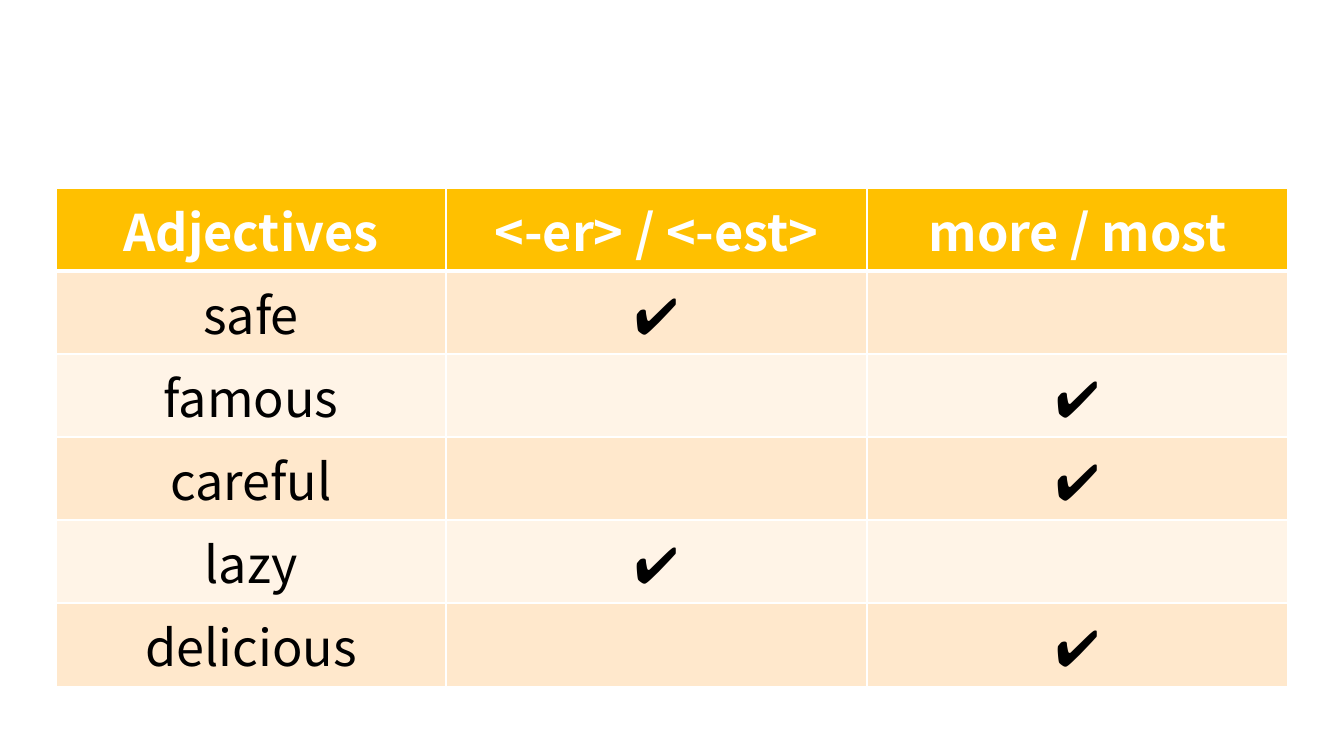
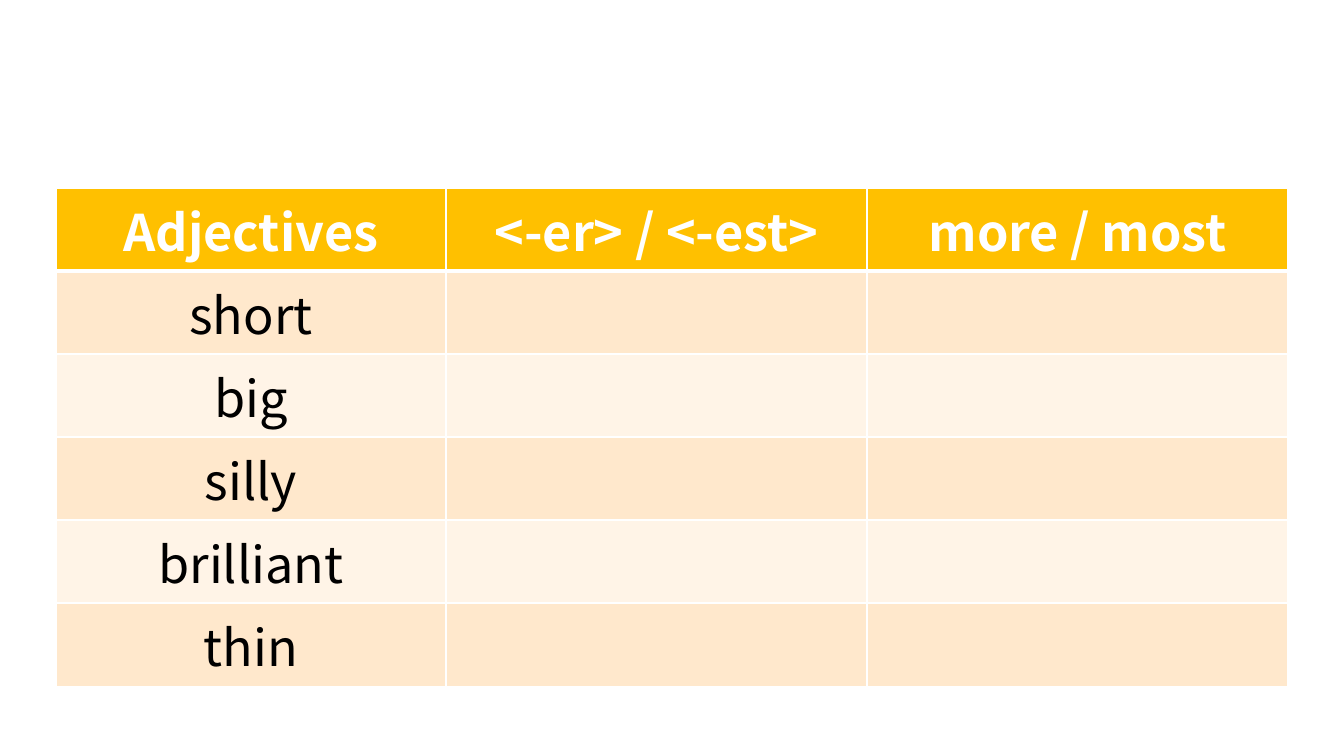
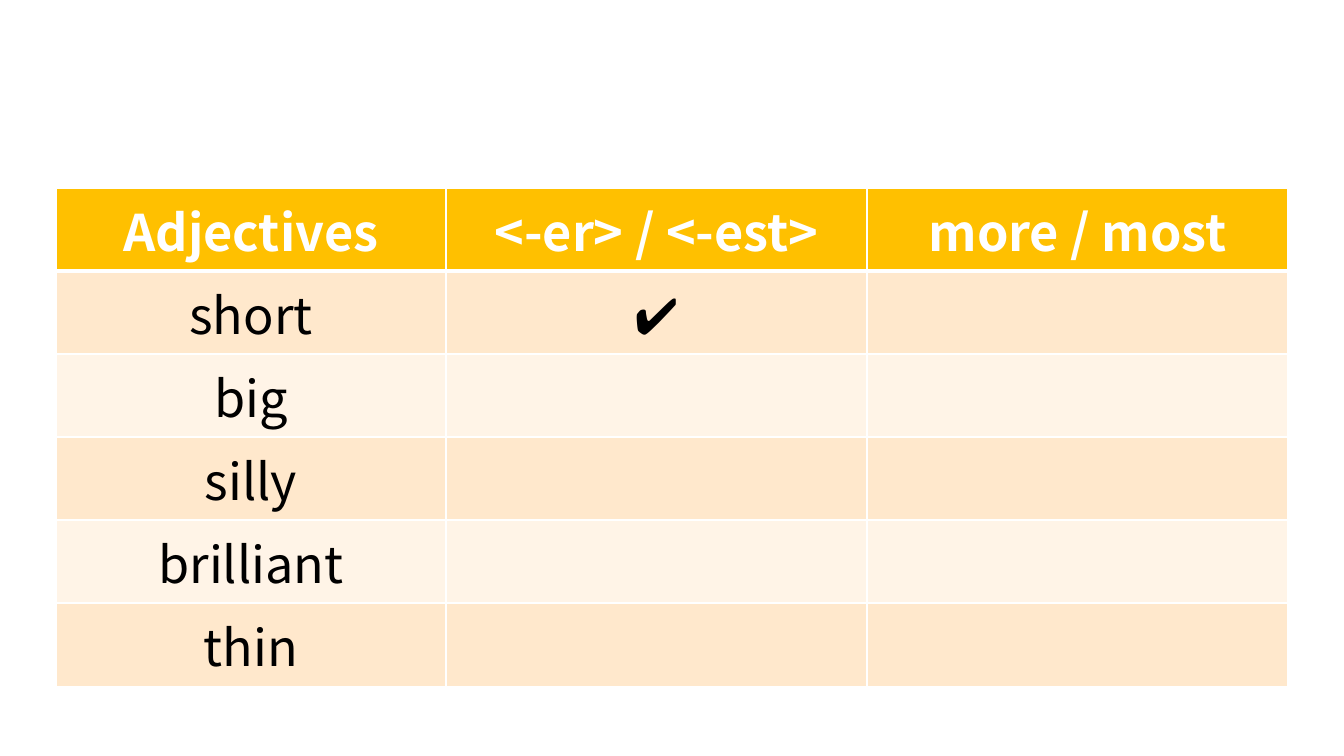
from lxml.etree import SubElement
from pptx import Presentation
from pptx.dml.color import RGBColor
from pptx.enum.text import PP_ALIGN
from pptx.oxml.ns import qn
from pptx.util import Pt

HEADER = ("Adjectives", "<-er> / <-est>", "more / most")
ER, MORE, OPEN = ("✔", ""), ("", "✔"), ("", "")
SLIDES = [
    [("safe", ER), ("famous", MORE), ("careful", MORE), ("lazy", ER), ("delicious", MORE)],
    [("short", OPEN), ("big", OPEN), ("silly", OPEN), ("brilliant", OPEN), ("thin", OPEN)],
    [("short", ER), ("big", OPEN), ("silly", OPEN), ("brilliant", OPEN), ("thin", OPEN)],
]

COLORS = {
    "header": "FFC000",
    "band_dark": "FFE8CC",
    "band_light": "FFF4E7",
    "border": "FFFFFF",
    "header_text": "FFFFFF",
    "text": "000000",
}
FONT, FONT_SIZE = "Noto Sans CJK JP", 36
THIN, THICK = 1, 3

SLIDE_WIDTH, SLIDE_HEIGHT = 1344, 756
TABLE_LEFT, TABLE_TOP = 56, 188
COLUMN_WIDTHS = (390, 421, 421)
ROW_HEIGHT = 83


def px(length):
    return round(length * 914400 / 100.8)


def color(name):
    return RGBColor.from_string(COLORS[name])


def add_borders(cell, top, bottom):
    properties = cell._tc.get_or_add_tcPr()
    for side, width in (("L", THIN), ("R", THIN), ("T", top), ("B", bottom)):
        line = SubElement(properties, qn(f"a:ln{side}"), w=str(Pt(width)))
        fill = SubElement(line, qn("a:solidFill"))
        SubElement(fill, qn("a:srgbClr"), val=COLORS["border"])


def add_text(cell, text, is_header):
    paragraph = cell.text_frame.paragraphs[0]
    paragraph.alignment = PP_ALIGN.CENTER
    run = paragraph.add_run()
    run.text = text
    run.font.name = FONT
    run.font.size = Pt(FONT_SIZE)
    run.font.bold = is_header
    run.font.color.rgb = color("header_text" if is_header else "text")


def style_cell(cell, row):
    add_borders(cell, THICK if row == 1 else THIN, THICK if row == 0 else THIN)
    band = "band_dark" if row % 2 else "band_light"
    cell.fill.solid()
    cell.fill.fore_color.rgb = color(band if row else "header")


def add_adjective_table(slide, adjectives):
    rows = [HEADER] + [(word, *marks) for word, marks in adjectives]
    table = slide.shapes.add_table(
        len(rows), len(HEADER), px(TABLE_LEFT), px(TABLE_TOP),
        px(sum(COLUMN_WIDTHS)), px(ROW_HEIGHT * len(rows)),
    ).table
    for column, width in zip(table.columns, COLUMN_WIDTHS):
        column.width = px(width)
    for row, texts in enumerate(rows):
        table.rows[row].height = px(ROW_HEIGHT)
        for column, text in enumerate(texts):
            cell = table.cell(row, column)
            style_cell(cell, row)
            if text:
                add_text(cell, text, row == 0)


def main():
    presentation = Presentation()
    presentation.slide_width = px(SLIDE_WIDTH)
    presentation.slide_height = px(SLIDE_HEIGHT)
    for adjectives in SLIDES:
        slide = presentation.slides.add_slide(presentation.slide_layouts[6])
        add_adjective_table(slide, adjectives)
    presentation.save("out.pptx")


if __name__ == "__main__":
    main()
